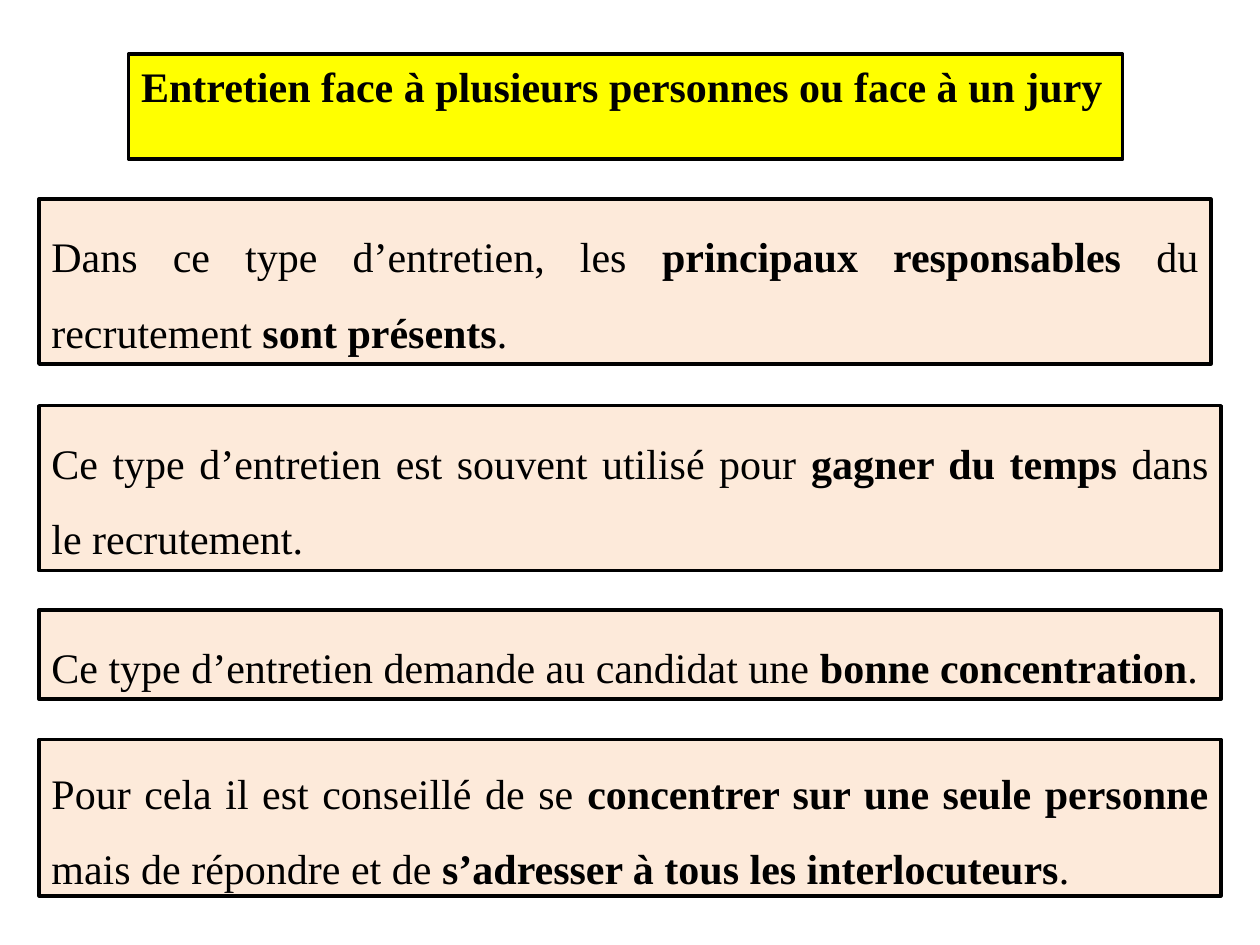
from pptx import Presentation
from pptx.dml.color import RGBColor
from pptx.enum.shapes import MSO_SHAPE
from pptx.enum.text import MSO_ANCHOR, MSO_AUTO_SIZE, PP_ALIGN
from pptx.util import Inches, Pt

COLOURS = {"ink": "000000", "title": "FFFF00", "box": "FDEADA"}


class SlideBuilder:
    font_name = "Times New Roman"
    font_size = Pt(24)
    line_width = Pt(2)

    def __init__(self, presentation):
        self.slide = presentation.slides.add_slide(presentation.slide_layouts[5])

    def colour(self, name):
        return RGBColor.from_string(COLOURS[name])

    def style(self, shape, fill, anchor, alignment):
        """Format the frame of a shape and return its first paragraph."""
        shape.fill.solid()
        shape.fill.fore_color.rgb = self.colour(fill)
        shape.line.color.rgb = self.colour("ink")
        shape.line.width = self.line_width
        frame = shape.text_frame
        frame.word_wrap = True
        frame.auto_size = MSO_AUTO_SIZE.SHAPE_TO_FIT_TEXT
        frame.vertical_anchor = anchor
        paragraph = frame.paragraphs[0]
        paragraph.alignment = alignment
        paragraph.font.name = self.font_name
        paragraph.font.size = self.font_size
        paragraph.font.color.rgb = self.colour("ink")
        return paragraph

    def title(self, text, left, top, width, height):
        shape = self.slide.shapes.title
        shape.left, shape.top = Inches(left), Inches(top)
        shape.width, shape.height = Inches(width), Inches(height)
        paragraph = self.style(shape, "title", MSO_ANCHOR.TOP, PP_ALIGN.LEFT)
        paragraph.font.bold = True
        paragraph.add_run().text = text

    def box(self, text, left, top, width, height, anchor=MSO_ANCHOR.TOP):
        """Add a justified box; words between ** marks are bold."""
        shape = self.slide.shapes.add_shape(
            MSO_SHAPE.RECTANGLE,
            Inches(left), Inches(top), Inches(width), Inches(height))
        shape.shadow.inherit = False
        paragraph = self.style(shape, "box", anchor, PP_ALIGN.JUSTIFY)
        paragraph.line_spacing = 1.5
        for index, part in enumerate(text.split("**")):
            run = paragraph.add_run()
            run.text = part
            run.font.bold = index % 2 == 1


def main():
    presentation = Presentation()
    presentation.slide_width = Inches(10)
    presentation.slide_height = Inches(7.5)
    builder = SlideBuilder(presentation)

    # Title
    builder.title("Entretien face à plusieurs personnes ou face à un jury",
                  1.02, 0.43, 7.89, 0.5)

    # Explanation boxes, from top to bottom
    left, width = 0.31, 9.38
    builder.box("Dans ce type d’entretien, les **principaux responsables **"
                "du recrutement **sont présents**.", left, 1.58, 9.3, 1.31)
    builder.box("Ce type d’entretien est souvent utilisé pour "
                "**gagner du temps **dans le recrutement.",
                left, 3.22, width, 1.31)
    builder.box("Ce type d’entretien demande au candidat une "
                "**bonne concentration**.", left, 4.84, width, 0.71)
    builder.box("Pour cela il est conseillé de se "
                "**concentrer sur une seule personne **mais de répondre et de "
                "**s’adresser à tous les interlocuteurs**.",
                left, 5.87, width, 1.24, MSO_ANCHOR.MIDDLE)

    presentation.save("out.pptx")


if __name__ == "__main__":
    main()
